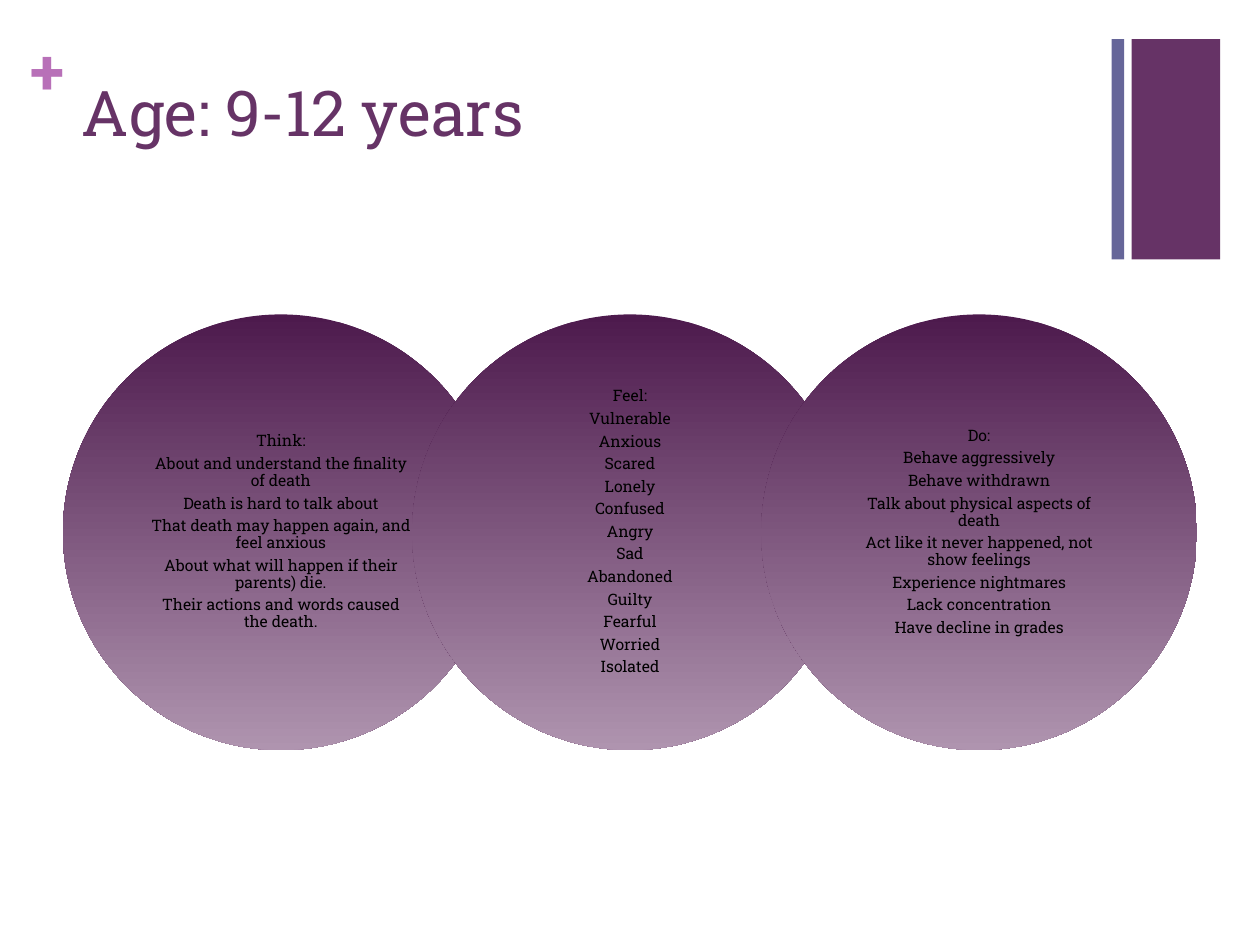
from dataclasses import dataclass

from pptx import Presentation
from pptx.dml.color import RGBColor
from pptx.enum.shapes import MSO_SHAPE
from pptx.enum.text import MSO_ANCHOR, MSO_AUTO_SIZE, PP_ALIGN
from pptx.util import Pt

RECTANGLE, OVAL = MSO_SHAPE.RECTANGLE, MSO_SHAPE.OVAL
TOP, MIDDLE = MSO_ANCHOR.TOP, MSO_ANCHOR.MIDDLE
LEFT, CENTER = PP_ALIGN.LEFT, PP_ALIGN.CENTER
NO_AUTOFIT = MSO_AUTO_SIZE.NONE
TITLE_ONLY = 5


@dataclass(frozen=True)
class Theme:
    font: str = "Roboto Slab"
    plum: RGBColor = RGBColor(0x66, 0x33, 0x66)
    slate: RGBColor = RGBColor(0x66, 0x66, 0x99)
    orchid: RGBColor = RGBColor(0xB8, 0x70, 0xB8)
    text: RGBColor = RGBColor(0, 0, 0)
    circle_top: RGBColor = RGBColor(0x4D, 0x1A, 0x4D)
    circle_bottom: RGBColor = RGBColor(0xAF, 0x94, 0xAF)
    title_size: int = 36
    list_size: int = 9


THEME = Theme()

REACTIONS = [
    ["Think:",
     "About and understand the finality of death",
     "Death is hard to talk about",
     "That death may happen again, and feel anxious",
     "About what will happen if their parents) die.",
     "Their actions and words caused the death."],
    ["Feel:", "Vulnerable", "Anxious", "Scared", "Lonely", "Confused", "Angry",
     "Sad", "Abandoned", "Guilty", "Fearful", "Worried", "Isolated"],
    ["Do:",
     "Behave aggressively",
     "Behave withdrawn",
     "Talk about physical aspects of death",
     "Act like it never happened, not show feelings",
     "Experience nightmares",
     "Lack concentration",
     "Have decline in grades"],
]


def style(paragraph, size, color, align, bold=False):
    paragraph.alignment = align
    font = paragraph.font
    font.name, font.size, font.bold = THEME.font, Pt(size), bold
    font.color.rgb = color


def set_margins(frame, horizontal, vertical):
    frame.margin_left = frame.margin_right = Pt(horizontal)
    frame.margin_top = frame.margin_bottom = Pt(vertical)


def add_plain_shape(slide, preset, left, top, width, height):
    shape = slide.shapes.add_shape(preset, Pt(left), Pt(top), Pt(width), Pt(height))
    shape.shadow.inherit = False
    shape.line.fill.background()
    return shape


def add_corner_bars(slide, left, top, width, height):
    """Thin slate bar, a gap, then a wide plum bar to the right edge."""
    thin, wide = 7.2, 50.6
    bars = [(left, thin, THEME.slate), (left + width - wide, wide, THEME.plum)]
    for bar_left, bar_width, color in bars:
        bar = add_plain_shape(slide, RECTANGLE, bar_left, top, bar_width, height)
        bar.fill.solid()
        bar.fill.fore_color.rgb = color


def add_plus_sign(slide, left, top, width, height):
    plus = slide.shapes.add_textbox(Pt(left), Pt(top), Pt(width), Pt(height))
    frame = plus.text_frame
    frame.word_wrap = True
    set_margins(frame, 0, 0)
    frame.text = "+"
    style(frame.paragraphs[0], THEME.title_size, THEME.orchid, LEFT, bold=True)


def fill_title(slide, left, top, width, height):
    title = slide.shapes.title
    title.left, title.top = Pt(left), Pt(top)
    title.width, title.height = Pt(width), Pt(height)
    frame = title.text_frame
    frame.text = "Age: 9-12 years"
    frame.vertical_anchor = TOP
    frame.auto_size = NO_AUTOFIT
    style(frame.paragraphs[0], THEME.title_size, THEME.plum, LEFT)


def add_reaction_circle(slide, lines, left, top, diameter):
    circle = add_plain_shape(slide, OVAL, left, top, diameter, diameter)
    # Dark at the top, light at the bottom
    circle.fill.gradient()
    circle.fill.gradient_angle = 270
    for stop, color in zip(circle.fill.gradient_stops,
                           (THEME.circle_top, THEME.circle_bottom)):
        stop.color.rgb = color
    # Heading and its reactions
    frame = circle.text_frame
    frame.word_wrap = True
    frame.vertical_anchor = MIDDLE
    set_margins(frame, 13.7, 0.7)
    frame.text = "\n".join(lines)
    for paragraph in frame.paragraphs:
        style(paragraph, THEME.list_size, THEME.text, CENTER)
        paragraph.line_spacing = 0.9
        paragraph.space_after = Pt(0.35 * THEME.list_size)


def add_circle_row(slide, left, top, width, height):
    """Overlapping circles spread evenly across the box."""
    step = (width - height) / (len(REACTIONS) - 1)
    for index, lines in enumerate(REACTIONS):
        add_reaction_circle(slide, lines, left + index * step, top, height)


def main():
    presentation = Presentation()
    presentation.slide_width, presentation.slide_height = Pt(720), Pt(540)
    slide = presentation.slides.add_slide(presentation.slide_layouts[TITLE_ONLY])
    add_corner_bars(slide, 635.2, 22.3, 62, 126)
    add_plus_sign(slide, 17.3, 18, 21, 44)
    fill_title(slide, 39.6, 38.2, 594.7, 87.8)
    add_circle_row(slide, 36, 179.7, 648, 249)
    presentation.save("out.pptx")


if __name__ == "__main__":
    main()
